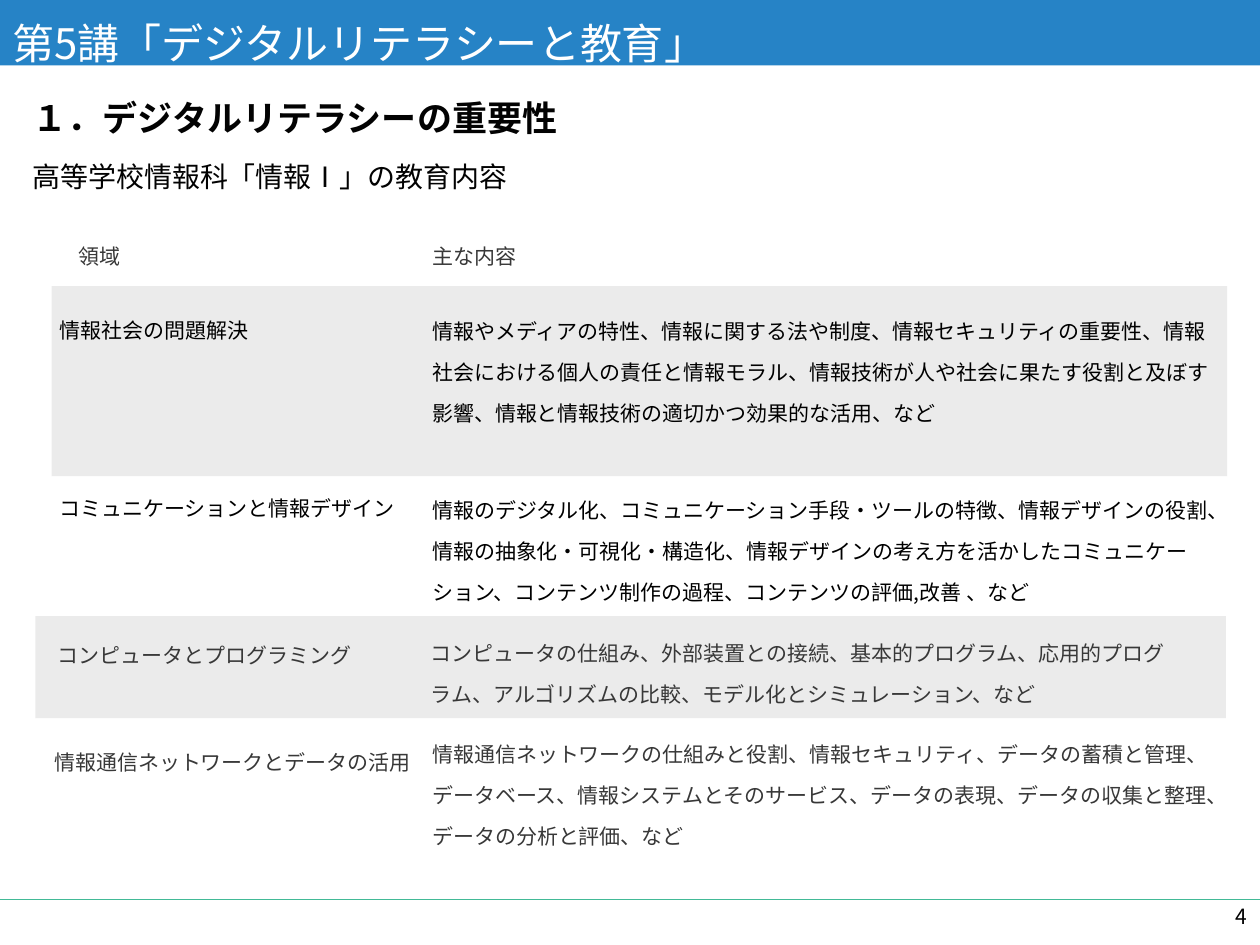
"""Build the slide on the content of the high school subject Information I."""
from lxml.etree import SubElement
from pptx import Presentation
from pptx.dml.color import RGBColor
from pptx.enum.shapes import MSO_CONNECTOR, MSO_SHAPE
from pptx.enum.text import MSO_ANCHOR, PP_ALIGN
from pptx.oxml.ns import qn
from pptx.util import Inches, Pt

FONT = "Noto Sans CJK JP"
COLORS = {"blue": "2683C6", "green": "42BA97", "band": "D9D9D9", "white": "FFFFFF",
          "black": "000000", "ink": "020202", "gray": "383838"}


def add_bar(left, top, width, height, color):
    bar = slide.shapes.add_shape(MSO_SHAPE.RECTANGLE, Inches(left), Inches(top),
                                 Inches(width), Inches(height))
    bar.shadow.inherit = False
    bar.fill.solid()
    bar.fill.fore_color.rgb = RGBColor.from_string(COLORS[color])
    bar.line.fill.background()
    return bar


def set_text(shape, text, size, color, margins=(0, 0, 0, 0), wrap=True,
             spacing=None, align=PP_ALIGN.LEFT, anchor=MSO_ANCHOR.TOP):
    frame = shape.text_frame
    frame.text = text
    frame.word_wrap = wrap
    frame.vertical_anchor = anchor
    frame.margin_left, frame.margin_top, frame.margin_right, frame.margin_bottom = map(Inches, margins)
    line = frame.paragraphs[0]
    line.alignment = align
    if spacing:
        line.line_spacing = Pt(spacing)
    font = line.runs[0].font
    font.size = Pt(size)
    font.color.rgb = RGBColor.from_string(COLORS[color])
    font.name = FONT
    SubElement(line.runs[0].font._element, qn("a:ea"), typeface=FONT)
    return font


deck = Presentation()
deck.slide_width, deck.slide_height = Inches(10), Inches(7.5)
slide = deck.slides.add_slide(deck.slide_layouts[6])

rule = slide.shapes.add_connector(MSO_CONNECTOR.STRAIGHT, 0, Inches(7.14), Inches(10), Inches(7.14))
rule.line.color.rgb = RGBColor.from_string(COLORS["green"])
rule.line.width = Pt(1)
SubElement(rule._element.spPr, qn("a:effectLst"))

header = add_bar(0, 0, 10, 0.52, "blue")
set_text(header, "第5講「デジタルリテラシーと教育」", 24, "white",
         (0.1, 0.2, 0.1, 0.05), anchor=MSO_ANCHOR.MIDDLE)

number = slide.shapes.add_textbox(Inches(9.44), Inches(7.07), Inches(0.56), Inches(0.4))
set_text(number, "4", 12, "black", (0.1, 0.05, 0.1, 0.05),
         align=PP_ALIGN.RIGHT, anchor=MSO_ANCHOR.MIDDLE)

title = slide.shapes.add_textbox(Inches(0.26), Inches(0.73), Inches(9.65), Inches(0.41))
font = set_text(title, "１．デジタルリテラシーの重要性", 20, "ink", wrap=False, anchor=MSO_ANCHOR.MIDDLE)
font.bold = True

lead = slide.shapes.add_textbox(Inches(0.26), Inches(1.27), Inches(7.92), Inches(0.4))
set_text(lead, "高等学校情報科「情報Ⅰ」の教育内容", 16, "ink")

for box in [(0.41, 2.27, 9.33, 1.51), (0.28, 4.89, 9.45, 0.81)]:
    band = add_bar(*box, "band")
    tint = band._element.spPr.find(qn("a:solidFill"))[0]
    SubElement(tint, qn("a:alpha"), val="50000")

rows = [
    ("gray", (0.62, 1.81), "領域", (3.43, 1.81, 3.85, 0.33), "主な内容"),
    ("black", (0.47, 2.39), "情報社会の問題解決", (3.43, 2.4, 6.3, 1.09),
     "情報やメディアの特性、情報に関する法や制度、情報セキュリティの重要性、情報社会における個人の責任と"
     "情報モラル、情報技術が人や社会に果たす役割と及ぼす影響、情報と情報技術の適切かつ効果的な活用、など"),
    ("black", (0.47, 3.81), "コミュニケーションと情報デザイン", (3.43, 3.82, 6.3, 1.98),
     "情報のデジタル化、コミュニケーション手段・ツールの特徴、情報デザインの役割、情報の抽象化・可視化・構造化、"
     "情報デザインの考え方を活かしたコミュニケーション、コンテンツ制作の過程、コンテンツの評価,改善 、など"),
    ("gray", (0.46, 4.97), "コンピュータとプログラミング", (3.42, 4.96, 5.91, 1.32),
     "コンピュータの仕組み、外部装置との接続、基本的プログラム、応用的プログラム、"
     "アルゴリズムの比較、モデル化とシミュレーション、など"),
    ("gray", (0.43, 5.82), "情報通信ネットワークとデータの活用", (3.43, 5.76, 6.31, 1.11),
     "情報通信ネットワークの仕組みと役割、情報セキュリティ、データの蓄積と管理、データベース、"
     "情報システムとそのサービス、データの表現、データの収集と整理、データの分析と評価、など"),
]
for color, spot, field, box, topics in rows:
    label = slide.shapes.add_textbox(*map(Inches, (*spot, 3.85, 0.33)))
    set_text(label, field, 12, color, wrap=False, spacing=23.5)
    body = slide.shapes.add_textbox(*map(Inches, box))
    set_text(body, topics, 12, color, spacing=23.5)

deck.save("out.pptx")
